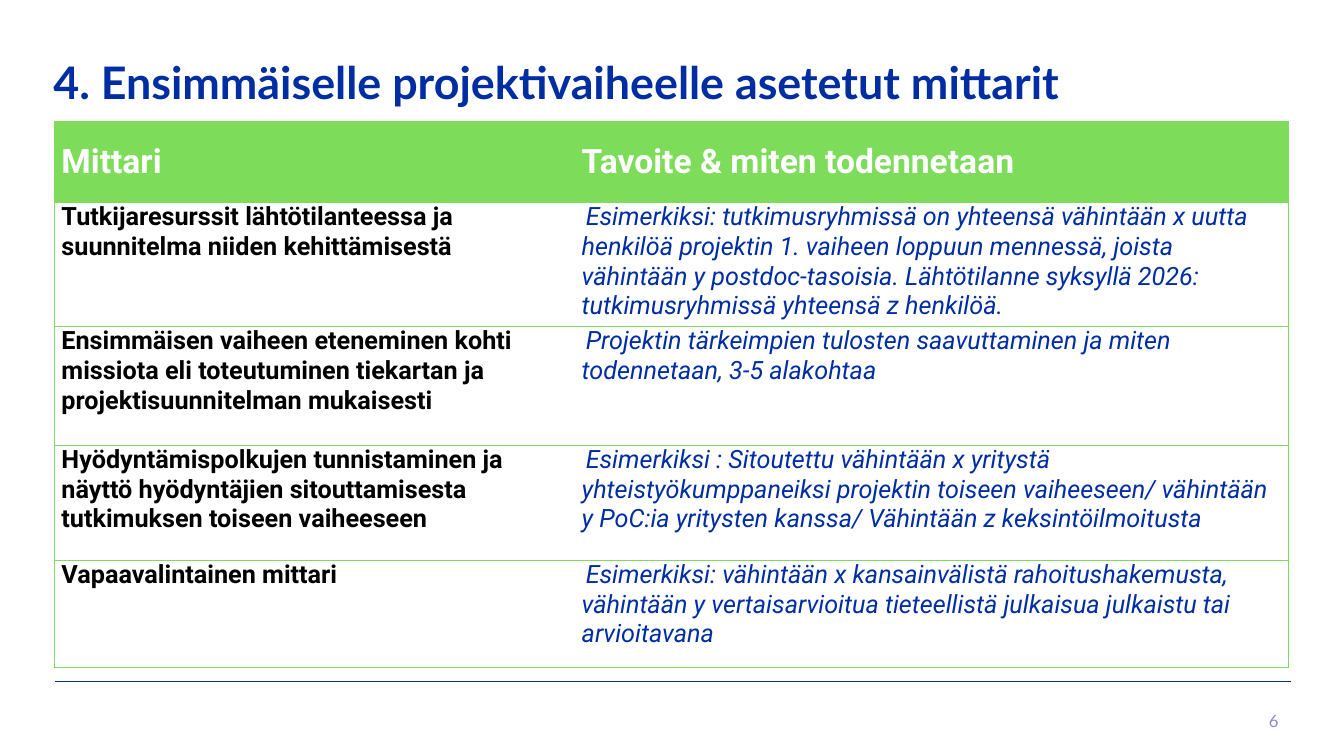
from lxml import etree
from pptx import Presentation
from pptx.dml.color import RGBColor
from pptx.enum import shapes, text
from pptx.oxml.ns import qn
from pptx.util import Inches, Pt

TITLE = "4. Ensimmäiselle projektivaiheelle asetetut mittarit"
PAGE_NUMBER = "6"
HEADER = ("Mittari", "Tavoite & miten todennetaan")
METRICS = [
    ("Tutkijaresurssit lähtötilanteessa ja suunnitelma niiden kehittämisestä",
     "Esimerkiksi: tutkimusryhmissä on yhteensä vähintään x uutta henkilöä projektin 1. vaiheen "
     "loppuun mennessä, joista vähintään y postdoc-tasoisia. Lähtötilanne syksyllä 2026: "
     "tutkimusryhmissä yhteensä z henkilöä."),
    ("Ensimmäisen vaiheen eteneminen kohti missiota eli toteutuminen tiekartan ja "
     "projektisuunnitelman mukaisesti",
     "Projektin tärkeimpien tulosten saavuttaminen ja miten todennetaan, 3-5 alakohtaa"),
    ("Hyödyntämispolkujen tunnistaminen ja näyttö hyödyntäjien sitouttamisesta tutkimuksen "
     "toiseen vaiheeseen",
     "Esimerkiksi : Sitoutettu vähintään x yritystä yhteistyökumppaneiksi projektin toiseen "
     "vaiheeseen/ vähintään y PoC:ia yritysten kanssa/ Vähintään z keksintöilmoitusta"),
    ("Vapaavalintainen mittari",
     "Esimerkiksi: vähintään x kansainvälistä rahoitushakemusta, vähintään y vertaisarvioitua "
     "tieteellistä julkaisua julkaistu tai arvioitavana"),
]
COLUMN_WIDTHS = (5.16, 7.08)
ROW_HEIGHTS = (0.8, 1.23, 1.18, 1.14, 1.06)


class Theme:
    blue, green, grey = "002EA2", "7DDC5A", "8C8FBF"
    white, black = "FFFFFF", "000000"
    title_font, table_font = "Lato", "Roboto"
    title_size, header_size, body_size, number_size = 32, 24, 18, 12
    rule_width, border_width = 0.85, 0.75


def style(paragraph, font, size, color, bold=False, italic=False):
    paragraph.font.name = font
    paragraph.font.size = Pt(size)
    paragraph.font.color.rgb = RGBColor.from_string(color)
    paragraph.font.bold = bold
    paragraph.font.italic = italic


def add_text(page, content, area, size, color, bold=False, align=text.PP_ALIGN.LEFT):
    box = page.shapes.add_textbox(*map(Inches, area))
    frame = box.text_frame
    frame.word_wrap = True
    frame.vertical_anchor = text.MSO_ANCHOR.MIDDLE
    para = frame.paragraphs[0]
    para.text = content
    para.alignment = align
    style(para, Theme.title_font, size, color, bold)
    return para


def set_borders(cell, visible):
    properties = cell._tc.get_or_add_tcPr()
    for position, side in enumerate("LRTB"):
        line = etree.Element(qn(f"a:ln{side}"), w=str(Pt(Theme.border_width)))
        if side in visible:
            fill = etree.SubElement(line, qn("a:solidFill"))
            etree.SubElement(fill, qn("a:srgbClr"), val=Theme.green)
        else:
            etree.SubElement(line, qn("a:noFill"))
        properties.insert(position, line)


def add_metrics_table(page):
    rows = [HEADER, *METRICS]
    frame = page.shapes.add_table(
        len(rows), len(HEADER), Inches(0.54), Inches(1.21),
        Inches(sum(COLUMN_WIDTHS)), Inches(sum(ROW_HEIGHTS)))
    table = frame.table
    table.first_row = table.horz_banding = False
    for column, width in zip(table.columns, COLUMN_WIDTHS):
        column.width = Inches(width)
    for row, height in zip(table.rows, ROW_HEIGHTS):
        row.height = Inches(height)
    for row_index, contents in enumerate(rows):
        for column_index, content in enumerate(contents):
            fill_cell(table.cell(row_index, column_index), content,
                      row_index == 0, column_index == 0)


def fill_cell(cell, content, is_header, is_metric):
    cell.margin_left = cell.margin_right = Inches(0.07)
    cell.margin_top = cell.margin_bottom = 0
    cell.vertical_anchor = text.MSO_ANCHOR.MIDDLE if is_header else text.MSO_ANCHOR.TOP
    cell.fill.solid()
    cell.fill.fore_color.rgb = RGBColor.from_string(Theme.green if is_header else Theme.white)
    set_borders(cell, "LTB" if is_metric else "RTB")
    para = cell.text_frame.paragraphs[0]
    para.text = content
    if is_header:
        style(para, Theme.table_font, Theme.header_size, Theme.white, bold=True)
    elif is_metric:
        style(para, Theme.table_font, Theme.body_size, Theme.black, bold=True)
    else:
        para._p.get_or_add_pPr().set("indent", str(Inches(0.04)))
        style(para, Theme.table_font, Theme.body_size, Theme.blue, italic=True)


def add_rule(page):
    rule = page.shapes.add_connector(
        shapes.MSO_CONNECTOR.STRAIGHT, Inches(0.55), Inches(6.76), Inches(12.8), Inches(6.76))
    rule.line.color.rgb = RGBColor.from_string(Theme.blue)
    rule.line.width = Pt(Theme.rule_width)
    etree.SubElement(rule._element.spPr, qn("a:effectLst"))


def main():
    deck = Presentation()
    deck.slide_width, deck.slide_height = Inches(13.33), Inches(7.5)
    page = deck.slides.add_slide(deck.slide_layouts[6])
    add_rule(page)
    title = add_text(page, TITLE, (0.43, 0.12, 12.25, 1.45),
                     Theme.title_size, Theme.blue, bold=True)
    title.line_spacing = 0.9
    add_text(page, PAGE_NUMBER, (11.04, 6.95, 1.74, 0.4),
             Theme.number_size, Theme.grey, align=text.PP_ALIGN.RIGHT)
    add_metrics_table(page)
    deck.save("out.pptx")


if __name__ == "__main__":
    main()
